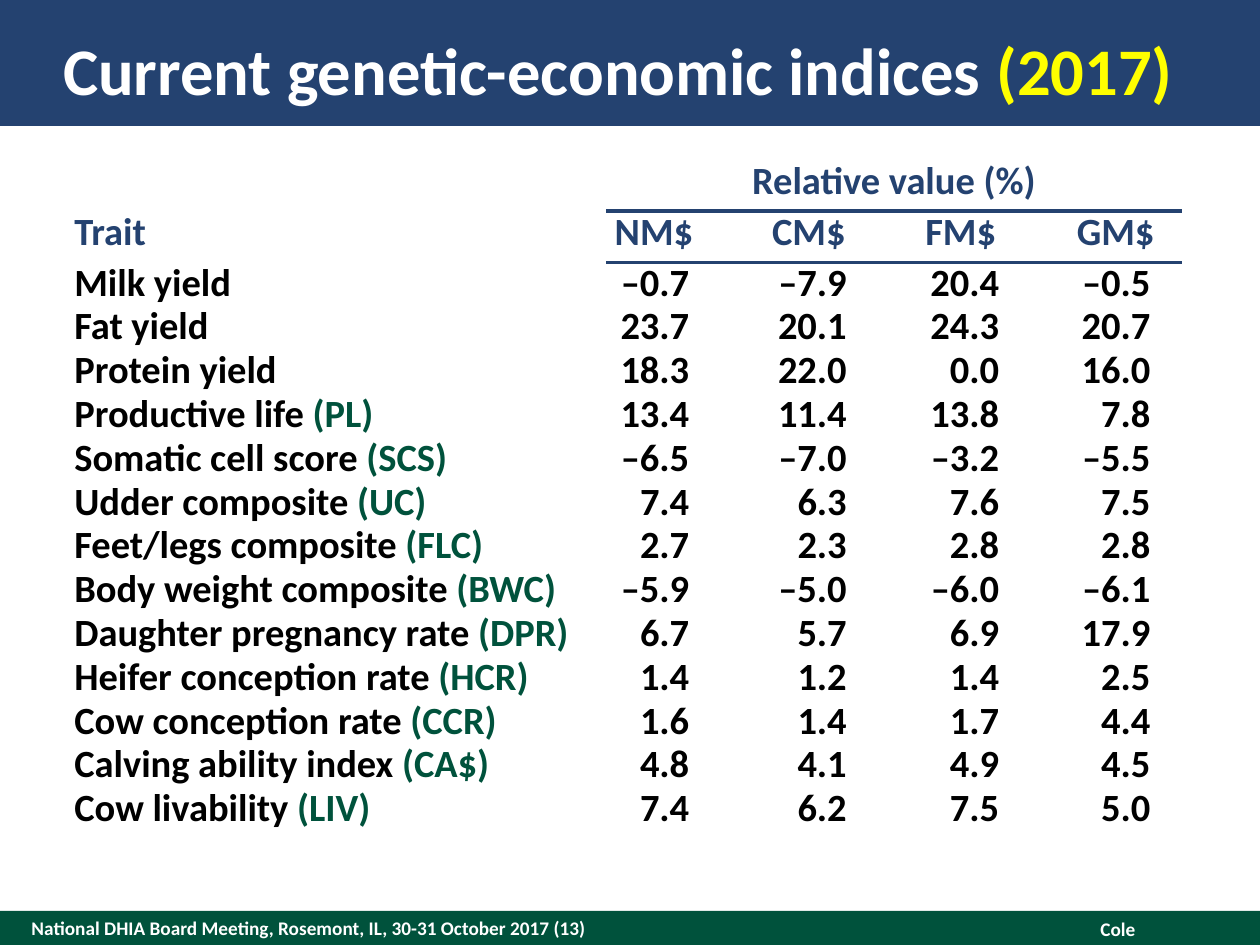
"""Build the slide of current genetic-economic indices."""
from typing import NamedTuple

from lxml.etree import SubElement
from pptx import Presentation
from pptx.dml.color import RGBColor
from pptx.enum.shapes import MSO_SHAPE as Kind
from pptx.enum.text import MSO_ANCHOR as Anchor, PP_ALIGN as Align
from pptx.oxml import parse_xml
from pptx.oxml.ns import nsdecls, qn
from pptx.util import Inches, Pt

NAVY, GREEN, WHITE, BLACK, YELLOW = "244270", "00523C", "FFFFFF", "000000", "FFFF00"
PLAIN = "{2D5ABB26-0587-4C30-8999-92F81FD0307C}"
LINE = 25 / 72


class Index(NamedTuple):
    name: str
    width: float
    head: tuple
    body: tuple


class Trait(NamedTuple):
    name: str
    code: str
    values: tuple


INDICES = [
    Index("NM$", 0.76, (0, 0.05, 0, 0.05), (0, 0, 0.1, 0)),
    Index("CM$", 1.5, (0.2, 0.05, 0, 0.05), (0.1, 0, 0.35, 0)),
    Index("FM$", 1.26, (0, 0.05, 0.15, 0.05), (0, 0, 0.4, 0)),
    Index("GM$", 1.05, (0, 0.05, 0, 0.05), (0, 0, 0.25, 0)),
]
TRAITS = [
    Trait("Milk yield", "", ("–0.7", "–7.9", "20.4", "–0.5")),
    Trait("Fat yield", "", ("23.7", "20.1", "24.3", "20.7")),
    Trait("Protein yield", "", ("18.3", "22.0", "0.0", "16.0")),
    Trait("Productive life", "PL", ("13.4", "11.4", "13.8", "7.8")),
    Trait("Somatic cell score", "SCS", ("–6.5", "–7.0", "–3.2", "–5.5")),
    Trait("Udder composite", "UC", ("7.4", "6.3", "7.6", "7.5")),
    Trait("Feet/legs composite", "FLC", ("2.7", "2.3", "2.8", "2.8")),
    Trait("Body weight composite", "BWC", ("–5.9", "–5.0", "–6.0", "–6.1")),
    Trait("Daughter pregnancy rate", "DPR", ("6.7", "5.7", "6.9", "17.9")),
    Trait("Heifer conception rate", "HCR", ("1.4", "1.2", "1.4", "2.5")),
    Trait("Cow conception rate", "CCR", ("1.6", "1.4", "1.7", "4.4")),
    Trait("Calving ability index", "CA$", ("4.8", "4.1", "4.9", "4.5")),
    Trait("Cow livability", "LIV", ("7.4", "6.2", "7.5", "5.0")),
]


def color(code: str) -> RGBColor:
    return RGBColor.from_string(code)


def write(box, *runs, size=22, align=Align.LEFT, anchor=Anchor.TOP,
          pad=(0, 0, 0, 0), space=None) -> None:
    """Fill a cell or text frame with (text, colour) runs."""
    frame = getattr(box, "text_frame", box)
    box.margin_left, box.margin_top, box.margin_right, box.margin_bottom = map(Inches, pad)
    box.vertical_anchor = anchor
    para = frame.paragraphs[0]
    para.alignment = align
    if space:
        para.line_spacing = Pt(space)
    for text, hue in runs:
        run = para.add_run()
        run.text = text
        font = run.font
        font.name, font.size, font.bold = "Calibri", Pt(size), True
        font.color.rgb = color(hue)


def band(slide, top: float, height: float, hue: str) -> None:
    bar = slide.shapes.add_shape(Kind.RECTANGLE, 0, Inches(top), Inches(10), Inches(height))
    bar.shadow.inherit = False
    bar.fill.solid()
    bar.fill.fore_color.rgb = color(hue)
    bar.line.fill.background()


def label(slide, text: str, at: tuple, **form) -> None:
    frame = slide.shapes.add_textbox(*map(Inches, at)).text_frame
    frame.word_wrap = True
    write(frame, (text, WHITE), size=11, **form)


def rule(cell, side: str) -> None:
    """Draw a navy border on one side of a cell."""
    line = parse_xml(f'<a:{side} {nsdecls("a")} w="{Pt(2.25)}"/>')
    fill = SubElement(line, qn("a:solidFill"))
    SubElement(fill, qn("a:srgbClr"), val=NAVY)
    cell._tc.get_or_add_tcPr().insert(0, line)


def fill_table(slide) -> None:
    spot = map(Inches, (0.59, 1.29, 8.8, 5.3))
    table = slide.shapes.add_table(len(TRAITS) + 2, len(INDICES) + 1, *spot).table
    table.first_row = table.horz_banding = False
    table._tbl.tblPr.find(qn("a:tableStyleId")).text = PLAIN
    for col, width in zip(table.columns, [4.22] + [i.width for i in INDICES]):
        col.width = Inches(width)
    for row, height in zip(table.rows, [0.38, 0.41] + [LINE] * len(TRAITS)):
        row.height = Inches(height)
    for cell in table.iter_cells():
        cell.fill.background()

    table.cell(0, 0).merge(table.cell(1, 0))
    table.cell(0, 1).merge(table.cell(0, len(INDICES)))
    head = {"anchor": Anchor.BOTTOM, "pad": (0, 0, 0, 0.05), "space": 24}
    write(table.cell(0, 0), ("Trait", NAVY), **head)
    write(table.cell(0, 1), ("Relative value (%)", NAVY), align=Align.CENTER, **head)
    for col, index in enumerate(INDICES, 1):
        cell = table.cell(1, col)
        write(cell, (index.name, NAVY), align=Align.CENTER, anchor=Anchor.BOTTOM,
              pad=index.head, space=22)
        rule(table.cell(0, col), "lnB")
        rule(cell, "lnT")

    for row, trait in enumerate(TRAITS, 2):
        runs = [(trait.name, BLACK)]
        if trait.code:
            runs.append((f" ({trait.code})", GREEN))
        write(table.cell(row, 0), *runs, space=25)
        for col, (index, value) in enumerate(zip(INDICES, trait.values), 1):
            write(table.cell(row, col), (value, BLACK), align=Align.RIGHT,
                  pad=index.body, space=25)


def main() -> None:
    deck = Presentation()
    deck.slide_width, deck.slide_height = Inches(10), Inches(7.5)
    slide = deck.slides.add_slide(deck.slide_layouts[5])
    band(slide, 7.23, 0.27, GREEN)
    band(slide, 0, 1, NAVY)
    label(slide, "National DHIA Board Meeting, Rosemont, IL, 30-31 October 2017 (13)",
          (0.25, 7.23, 7, 0.27), anchor=Anchor.MIDDLE)
    label(slide, "Cole", (7.11, 7.23, 2, 0.29), align=Align.RIGHT, pad=(0.1, 0.05, 0.1, 0.05))
    title = slide.shapes.title
    title.left, title.top, title.width, title.height = map(Inches, (0.5, 0.2, 9, 0.7))
    write(title.text_frame, ("Current genetic-economic indices ", WHITE), ("(2017)", YELLOW),
          size=38, anchor=Anchor.MIDDLE)
    slide.shapes._spTree.append(title._element)
    fill_table(slide)
    deck.save("out.pptx")


if __name__ == "__main__":
    main()
